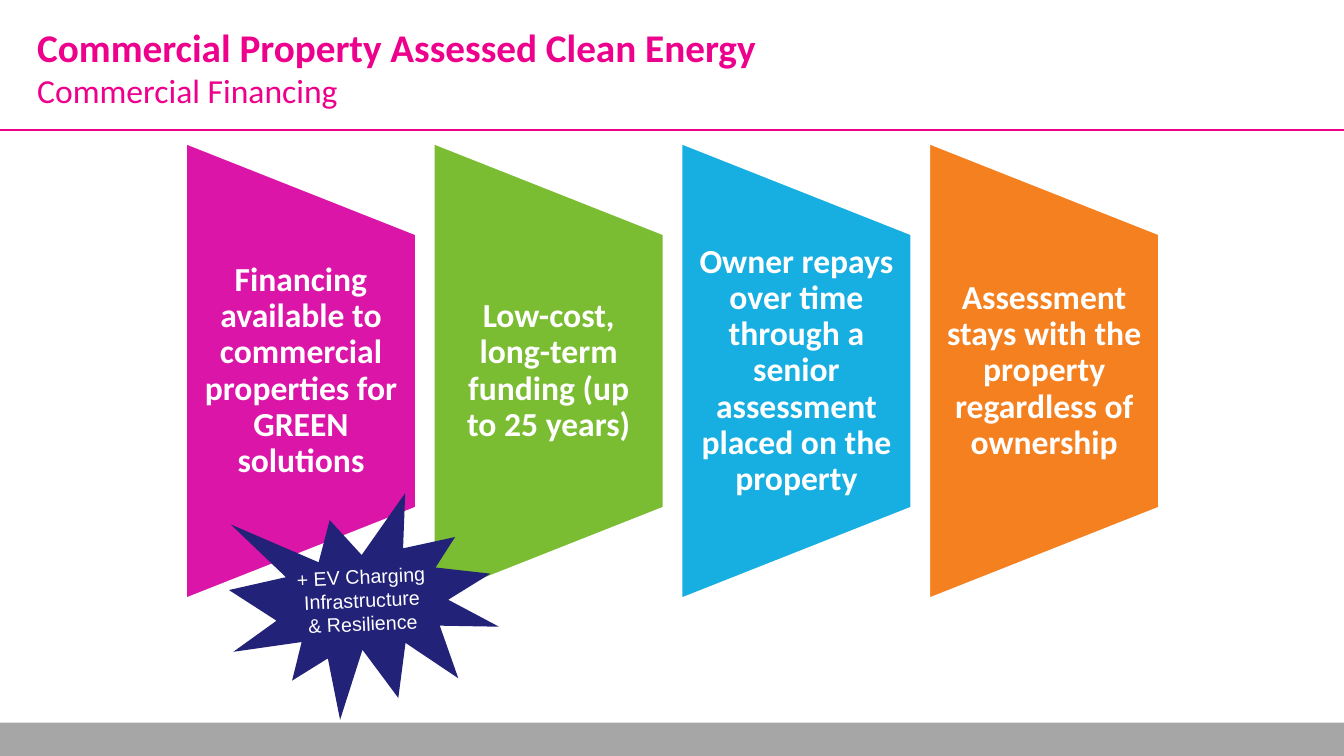
from pptx import Presentation
from pptx.dml.color import RGBColor
from pptx.enum import shapes, text
from pptx.oxml.ns import qn
from pptx.util import Inches, Pt
from lxml import etree

COLORS = {"title": "ED008C", "white": "FFFFFF", "footer": "A6A6A6", "burst": "232279"}
PANELS = [
    ("Financing available to commercial properties for GREEN solutions", "DB15A7"),
    ("Low-cost, long-term funding (up to 25 years)", "7BBD32"),
    ("Owner repays over time through a senior assessment placed on the property", "17AEE1"),
    ("Assessment stays with the property regardless of ownership", "F58020"),
]
WIDTH, HEIGHT = 13.33, 7.5

deck = Presentation()
deck.slide_width, deck.slide_height = Inches(WIDTH), Inches(HEIGHT)
slide = deck.slides.add_slide(deck.slide_layouts[6])


def add_filled(kind, left, top, width, height, color):
    filled = slide.shapes.add_shape(kind, Inches(left), Inches(top), Inches(width), Inches(height))
    filled.shadow.inherit = False
    filled.fill.solid()
    filled.fill.fore_color.rgb = RGBColor.from_string(color)
    filled.line.fill.background()
    return filled


def style(font, name, size, color, bold=False):
    font.name, font.size, font.bold = name, Pt(size), bold
    font.color.rgb = RGBColor.from_string(color)


footer_height = 0.33
add_filled(shapes.MSO_SHAPE.RECTANGLE, 0, HEIGHT - footer_height, WIDTH, footer_height, COLORS["footer"])

header_rule = slide.shapes.add_connector(
    shapes.MSO_CONNECTOR.STRAIGHT, 0, Inches(1.29), Inches(WIDTH), Inches(1.29))
header_rule.line.color.rgb = RGBColor.from_string(COLORS["title"])
header_rule.line.width = Pt(1)
etree.SubElement(header_rule._element.spPr, qn("a:effectLst"))

first_left, column_step = 1.84, 2.457
panel_width, panel_length, panel_middle = 2.29, 4.53, 3.68
caption_height = 2.72
for column, (message, color) in enumerate(PANELS):
    left = first_left + column * column_step
    panel = add_filled(
        shapes.MSO_SHAPE.FLOWCHART_MANUAL_OPERATION,
        left + (panel_width - panel_length) / 2, panel_middle - panel_width / 2,
        panel_length, panel_width, color)
    panel.rotation = 270
    panel.line.color.rgb = RGBColor.from_string(COLORS["white"])
    panel.line.width = Pt(2)

    caption = slide.shapes.add_textbox(
        Inches(left), Inches(panel_middle - caption_height / 2),
        Inches(panel_width), Inches(caption_height)).text_frame
    caption.word_wrap = True
    caption.vertical_anchor = text.MSO_ANCHOR.MIDDLE
    caption.margin_left = caption.margin_right = Inches(0.17)
    caption.margin_top = caption.margin_bottom = 0
    caption.text = message
    paragraph = caption.paragraphs[0]
    paragraph.alignment = text.PP_ALIGN.CENTER
    paragraph.line_spacing = 0.9
    style(paragraph.font, "Calibri", 24, COLORS["white"], True)

burst = add_filled(shapes.MSO_SHAPE.EXPLOSION1, 2.28, 4.91, 2.66, 2.22, COLORS["burst"])
burst.rotation = 357.5
burst.text_frame.word_wrap = True
burst.text_frame.vertical_anchor = text.MSO_ANCHOR.MIDDLE
burst.text_frame.text = "+ EV Charging Infrastructure\n& Resilience"
for paragraph in burst.text_frame.paragraphs:
    paragraph.alignment = text.PP_ALIGN.CENTER
    style(paragraph.font, "Arial", 14, COLORS["white"])

heading = slide.shapes.add_textbox(Inches(0.27), Inches(0.18), Inches(9.09), Inches(0.98)).text_frame
heading.word_wrap = True
title_lines = heading.paragraphs[0]
title = title_lines.add_run()
title.text = "Commercial Property Assessed Clean Energy"
style(title.font, "Calibri", 28, COLORS["title"], True)
title_lines.add_line_break()
subtitle = title_lines.add_run()
subtitle.text = "Commercial Financing"
style(subtitle.font, "Calibri", 24, COLORS["title"])

deck.save("out.pptx")
